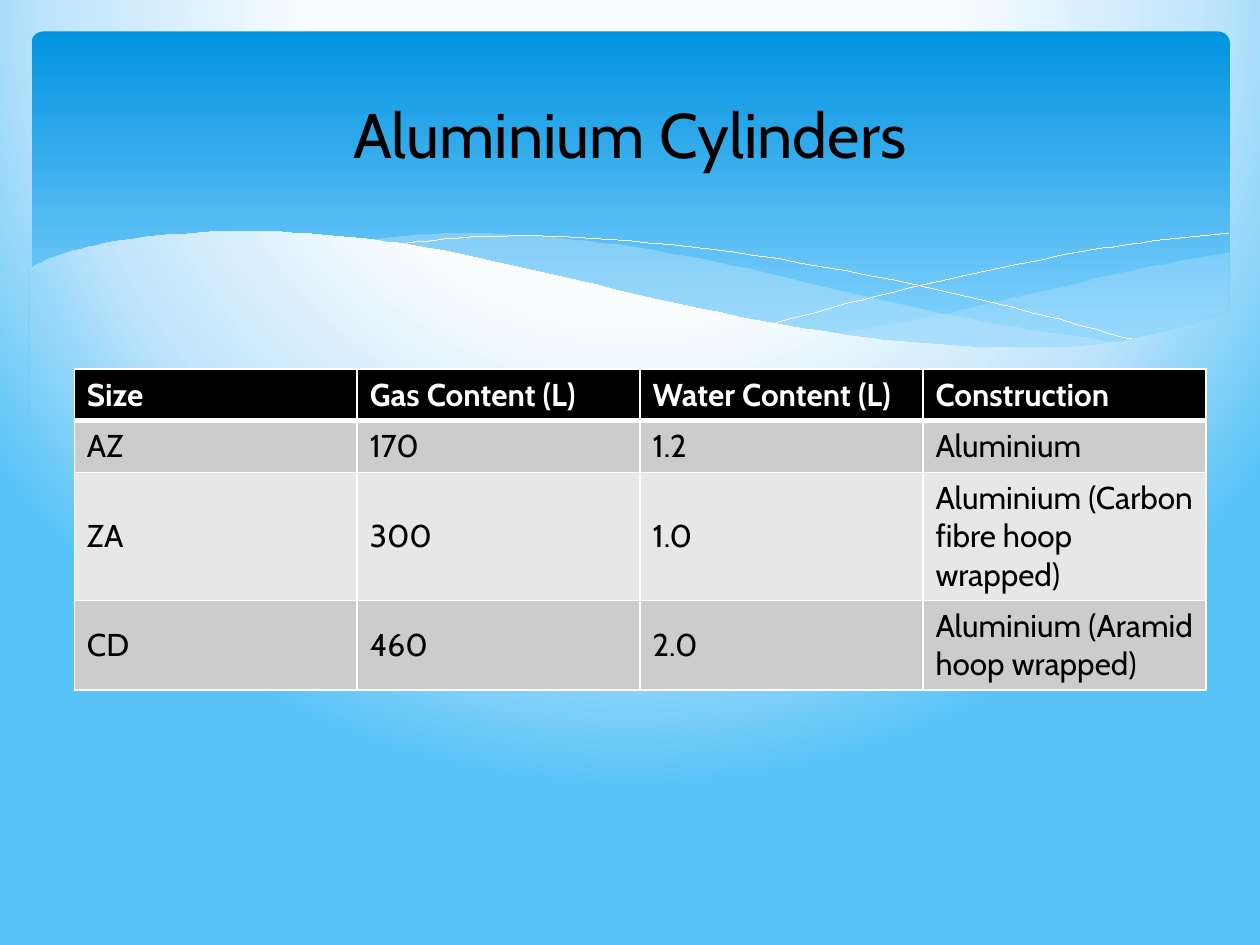
from copy import deepcopy

from lxml import etree
from pptx import Presentation
from pptx import util as u
from pptx.dml.color import RGBColor
from pptx.enum import shapes as kinds, text
from pptx.oxml.ns import qn

INK = {"white": "FFFFFF", "black": "000000", "deep": "0293E0", "sky": "83D3FE",
       "wave": "C6E7FC", "band": "CCCCCC", "pale": "E7E7E7",
       "glow": "FAFDFE", "mist": "BEE4FC", "blue": "58C3F6"}
RGB = {name: RGBColor.from_string(code) for name, code in INK.items()}
FONT = "Cabin"
UNIT = 100
STEPS = 8


def smooth(knots):
    last = len(knots) - 1
    slopes = []
    for i in range(last + 1):
        (x0, y0), (x1, y1) = knots[max(i - 1, 0)], knots[min(i + 1, last)]
        slopes.append((y1 - y0) / (x1 - x0))
    points = [knots[0]]
    for i in range(last):
        (x0, y0), (x1, y1) = knots[i], knots[i + 1]
        width = x1 - x0
        for step in range(1, STEPS + 1):
            t = step / STEPS
            ease = t * t * (3 - 2 * t)
            bend = t * (1 - t) * ((1 - t) * slopes[i] - t * slopes[i + 1])
            points.append((x0 + t * width, y0 + ease * (y1 - y0) + width * bend))
    return points


def draw(points, close):
    grid = [(round(x * UNIT), round(y * UNIT)) for x, y in points]
    pen = slide.shapes.build_freeform(*grid[0], scale=u.Inches(1 / UNIT))
    pen.add_line_segments(grid[1:], close=close)
    form = pen.convert_to_shape()
    form.shadow.inherit = False
    return form


deck = Presentation()
deck.slide_width, deck.slide_height = u.Inches(10), u.Inches(7.5)
slide = deck.slides.add_slide(deck.slide_layouts[5])

panel = slide.shapes.add_shape(kinds.MSO_SHAPE.ROUNDED_RECTANGLE, u.Inches(0.25),
                               u.Inches(0.25), u.Inches(9.51), u.Inches(2.7))
panel.adjustments[0] = 0.034
panel.shadow.inherit = False
panel.line.fill.background()

back = slide.background.fill
shades = ((back, ((0.4, "glow"), (0.74, "mist"), (1, "blue"))),
          (panel.fill, ((0, "deep"), (0.9, "sky"))))
for fill, ramp in shades:
    fill.gradient()
    holder = slide._element.cSld.bg if fill is back else panel._element.spPr
    stops = next(holder.iter(qn("a:gsLst")))
    while len(stops) < len(ramp):
        stops.append(deepcopy(stops[0]))
    for stop, (place, name) in zip(fill.gradient_stops, ramp):
        stop.position = place
        stop.color.rgb = RGB[name]
panel.fill.gradient_angle = 270

radial = next(slide._element.cSld.bg.iter(qn("a:gradFill")))
radial.remove(radial.find(qn("a:lin")))
ring = etree.SubElement(radial, qn("a:path"), {"path": "circle"})
etree.SubElement(ring, qn("a:fillToRect"), l="20000", t="-40000", r="20000", b="140000")

ribbons = [
    {"alpha": 29,
     "upper": [(6.61, 2.65), (7.29, 2.53), (8.32, 2.3), (9.06, 2.13), (9.76, 2)],
     "lower": [(6.61, 2.65), (7.19, 2.72), (8.03, 2.78), (8.89, 2.72), (9.35, 2.62),
               (9.76, 2.47)]},
    {"alpha": 40,
     "upper": [(2.86, 1.91), (3.61, 1.85), (4.65, 1.91), (5.69, 2.08), (6.68, 2.31),
               (7.75, 2.54), (8.93, 2.73)],
     "lower": [(2.86, 1.91), (3.62, 2.03), (4.49, 2.22), (5.66, 2.48), (6.95, 2.7),
               (7.96, 2.78), (8.93, 2.73)]}]
for ribbon in ribbons:
    upper, lower = smooth(ribbon["upper"]), smooth(ribbon["lower"])
    wave = draw(upper + lower[::-1], True)
    wave.line.fill.background()
    wave.fill.solid()
    wave.fill.fore_color.rgb = RGB["wave"]
    color = next(wave._element.spPr.iter(qn("a:srgbClr")))
    etree.SubElement(color, qn("a:alpha"), val=str(ribbon["alpha"] * 1000))

falling = [(3.09, 1.95), (3.63, 1.89), (4.5, 1.88), (5.82, 2), (7.27, 2.26),
           (8.31, 2.51), (9.07, 2.72)]
rising = [(6.13, 2.57), (6.95, 2.35), (8.06, 2.1), (8.95, 1.94), (9.75, 1.85)]
for knots in (falling, rising):
    thread = draw(smooth(knots), False)
    thread.fill.background()
    thread.line.color.rgb = RGB["white"]
    thread.line.width = u.Pt(0.01)

crest = [(0.23, 2.13), (0.46, 2.03), (0.95, 1.91), (1.77, 1.84), (2.5, 1.86),
         (3.4, 1.97), (4.47, 2.2), (5.55, 2.45), (6.88, 2.68), (7.93, 2.76),
         (8.75, 2.73), (9.4, 2.59), (9.77, 2.46)]
base = 3.29
hill = draw(smooth(crest) + [(9.77, base), (0.23, base)], True)
hill.line.fill.background()
hill._element.set("useBgFill", "1")

rows = [("Size", "Gas Content (L)", "Water Content (L)", "Construction"),
        ("AZ", "170", "1.2", "Aluminium"),
        ("ZA", "300", "1.0", "Aluminium (Carbon fibre hoop wrapped)"),
        ("CD", "460", "2.0", "Aluminium (Aramid hoop wrapped)")]
frame = slide.shapes.add_table(len(rows), len(rows[0]), u.Inches(0.59), u.Inches(2.93),
                               u.Inches(8.98), u.Inches(2.51))
for r, row in enumerate(rows):
    header = r == 0
    shade = "black" if header else "band" if r % 2 else "pale"
    frame.table.rows[r].height = u.Inches(0.41)
    for c, word in enumerate(row):
        cell = frame.table.cell(r, c)
        cell.text = word
        cell.vertical_anchor = text.MSO_ANCHOR.MIDDLE
        font = cell.text_frame.paragraphs[0].font
        font.name, font.size, font.bold = FONT, u.Pt(18), header
        font.color.rgb = RGB["white" if header else "black"]
        for side in "LRTB":
            thick = (r, side) in ((0, "B"), (1, "T"))
            edge = etree.SubElement(cell._tc.get_or_add_tcPr(), qn(f"a:ln{side}"),
                                    w=str(u.Pt(3 if thick else 1)))
            paint = etree.SubElement(edge, qn("a:solidFill"))
            etree.SubElement(paint, qn("a:srgbClr"), val=INK["white"])
        cell.fill.solid()
        cell.fill.fore_color.rgb = RGB[shade]
frame.height = u.Inches(2.51)

title = slide.shapes.title
title.left, title.top = u.Inches(0.5), u.Inches(0.37)
title.width, title.height = u.Inches(9), u.Inches(1.37)
title.text_frame.text = "Aluminium Cylinders"
title.text_frame.vertical_anchor = text.MSO_ANCHOR.MIDDLE
head = title.text_frame.paragraphs[0]
head.alignment = text.PP_ALIGN.CENTER
head.font.name, head.font.size = FONT, u.Pt(36)
head.font.color.rgb = RGB["black"]
title._element.getparent().append(title._element)

deck.save("out.pptx")
